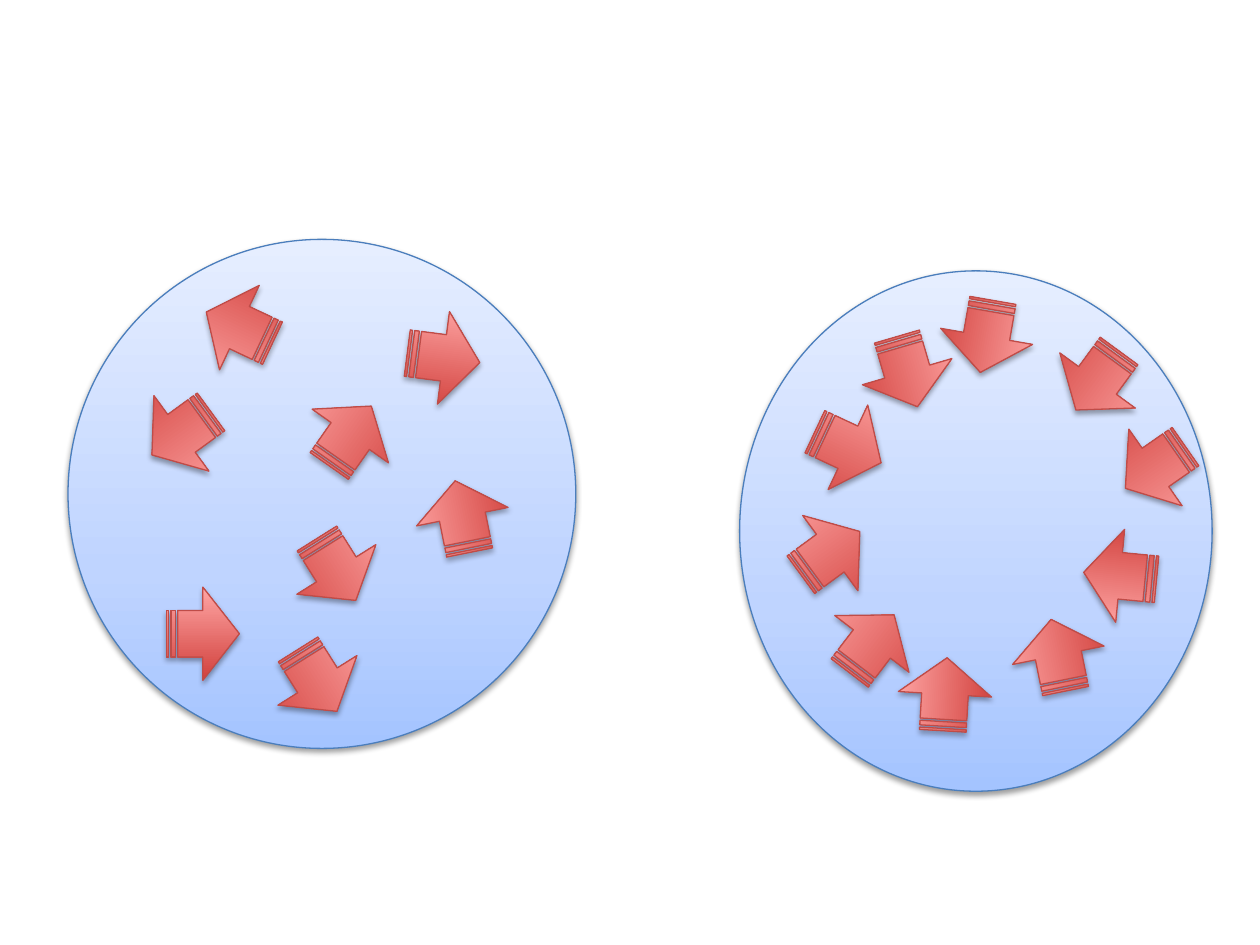
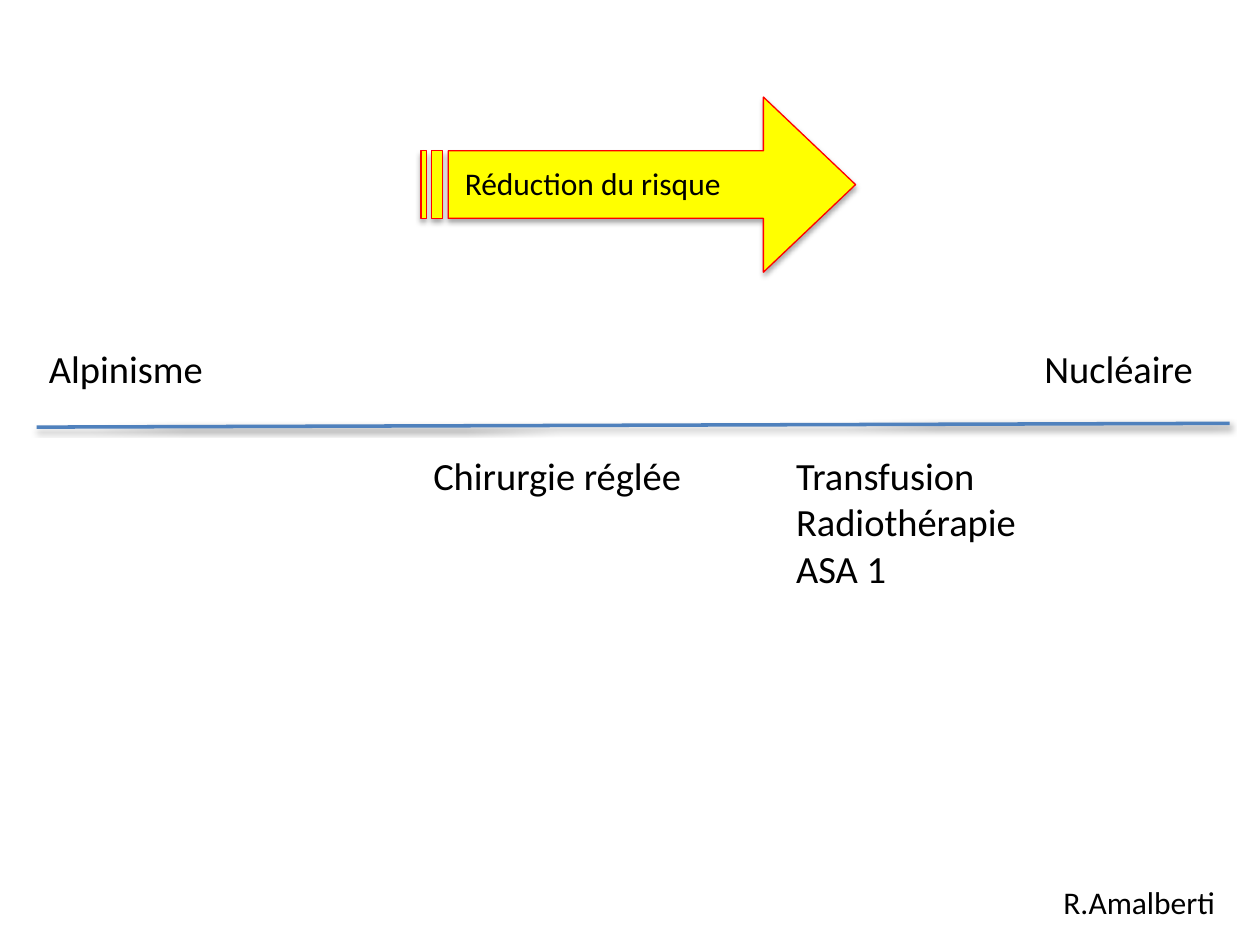
from lxml import etree
from pptx import Presentation
from pptx.dml.color import RGBColor
from pptx.enum.shapes import MSO_CONNECTOR, MSO_SHAPE
from pptx.enum.text import MSO_AUTO_SIZE
from pptx.oxml.ns import qn
from pptx.util import Inches, Pt

OVAL = MSO_SHAPE.OVAL
ARROW = MSO_SHAPE.STRIPED_RIGHT_ARROW
STRAIGHT = MSO_CONNECTOR.STRAIGHT
GROW = MSO_AUTO_SIZE.SHAPE_TO_FIT_TEXT

# Colours and font
BLACK = RGBColor(0x00, 0x00, 0x00)
YELLOW = RGBColor(0xFF, 0xFF, 0x00)
RED = RGBColor(0xFF, 0x00, 0x00)
BLUE = RGBColor(0x4F, 0x81, 0xBD)
RIM = RGBColor(0x4B, 0x7E, 0xBC)
EDGE = RGBColor(0xBF, 0x4C, 0x48)
SKY = [(0, RGBColor(0xA4, 0xC4, 0xFF)), (35, RGBColor(0xBF, 0xD4, 0xFF)),
       (100, RGBColor(0xE6, 0xEE, 0xFF))]
ROSE = [(0, RGBColor(0xD1, 0x40, 0x3C)), (100, RGBColor(0xFF, 0xA6, 0xA5))]
FONT = "Calibri"

# The slide is a grid of 10 columns by 7.5 rows
WIDE, HIGH = Inches(10), Inches(7.5)
COL, ROW = WIDE / 10, HIGH / 7.5
SOFT = (38, 1.6)   # shadow opacity in percent, distance in points
DEEP = (35, 1.8)

# Circles as grid boxes; arrows as column, row and turn inside them
SIZE = (0.58, 0.74)
LOOSE = (0.54, 1.9, 4.03, 4.04)
ASTRAY = [(0.78, 2.76, 0), (2.84, 1.83, 258.6), (0.61, 1.17, 143.9),
          (2.69, 0.57, 7.4), (1.95, 1.19, 305.1), (1.84, 2.25, 57.9),
          (1.07, 0.33, 205.2), (1.69, 3.13, 57.9)]
TIGHT = (5.87, 2.15, 3.75, 4.13)
INWARD = [(0.43, 1.87, 323.7), (3.01, 1.19, 145.2), (2.24, 2.68, 258.6),
          (0.57, 1.03, 25.1), (1.67, 0.15, 99.9), (2.55, 0.5, 126.2),
          (0.76, 2.59, 307.4), (2.73, 2.05, 185.5), (1.04, 0.43, 73.7),
          (1.34, 2.99, 273.4)]


def grid(x, y, w, h):
    return [int(n) for n in (x * COL, y * ROW, w * COL, h * ROW)]


def shade(part, depth):
    """Drop a soft shadow straight down."""
    alpha, dist = depth
    props = part._element.spPr
    effect = etree.SubElement(props, qn("a:effectLst"))
    drop = etree.SubElement(effect, qn("a:outerShdw"), blurRad=str(Pt(3.1)),
                            dist=str(Pt(dist)), dir="5400000", rotWithShape="0")
    tint = etree.SubElement(drop, qn("a:srgbClr"), val=str(BLACK))
    etree.SubElement(tint, qn("a:alpha"), val=str(alpha * 1000))


def blend(part, stops):
    """Fill from bottom to top through the given stops."""
    part.fill.gradient()
    part.fill.gradient_angle = 90
    ramp = part._element.spPr.find(".//" + qn("a:gsLst"))
    for old in list(ramp):
        ramp.remove(old)
    for pos, hue in stops:
        stop = etree.SubElement(ramp, qn("a:gs"), pos=str(pos * 1000))
        etree.SubElement(stop, qn("a:srgbClr"), val=str(hue))


def form(slide, kind, box, fill, line, depth, turn=0):
    part = slide.shapes.add_shape(kind, *grid(*box))
    part.rotation = turn
    if isinstance(fill, RGBColor):
        part.fill.solid()
        part.fill.fore_color.rgb = fill
    else:
        blend(part, fill)
    part.line.color.rgb = line
    part.line.width = Pt(0.75)
    shade(part, depth)
    return part


def write(slide, text, box, size=22, wrap=False):
    frame = slide.shapes.add_textbox(*grid(*box)).text_frame
    frame.word_wrap = wrap
    frame.auto_size = GROW
    frame.text = text
    for para in frame.paragraphs:
        font = para.runs[0].font
        font.name, font.size = FONT, Pt(size)
        font.color.rgb = BLACK


def swarm(slide, box, arrows):
    """A circle with its arrows."""
    form(slide, OVAL, box, SKY, RIM, SOFT)
    for x, y, turn in arrows:
        form(slide, ARROW, (box[0] + x, box[1] + y, *SIZE), ROSE, EDGE, DEEP, turn)


def banner(slide, box):
    """The labelled arrow above the scale."""
    x, y, w, h = box
    part = form(slide, ARROW, box, YELLOW, RED, DEEP)
    part.adjustments[0], part.adjustments[1] = 0.385, 0.526
    write(slide, "Réduction du risque", (x + 0.25, y + 0.48, w - 0.7, 0.4),
          size=18, wrap=True)


def scale(slide, box):
    """A line with its ends named above and examples below."""
    x, y, w, h = box
    left, top, wide, tall = grid(x, y + 0.7, w, 0.03)
    axis = slide.shapes.add_connector(STRAIGHT, left, top, left + wide, top - tall)
    axis.line.color.rgb = BLUE
    axis.line.width = Pt(2)
    shade(axis, SOFT)
    low = y + 0.85
    write(slide, "Nucléaire", (x + 7.9, y, 1.39, 0.47))
    write(slide, "Alpinisme", (x, y, 1.44, 0.47))
    write(slide, "Transfusion\nRadiothérapie\nASA 1",
          (x + 5.93, low, 1.97, h - 0.85))
    write(slide, "Chirurgie réglée", (x + 3.05, low, 2.19, 0.47))


def main():
    deck = Presentation()
    deck.slide_width, deck.slide_height = WIDE, HIGH
    blank = deck.slide_layouts[6]

    # Slide 1: scattered and converging arrows
    first = deck.slides.add_slide(blank)
    swarm(first, LOOSE, ASTRAY)
    swarm(first, TIGHT, INWARD)

    # Slide 2: scale of risk
    second = deck.slides.add_slide(blank)
    scale(second, (0.29, 2.69, 9.47, 2.06))
    banner(second, (3.34, 0.77, 3.45, 1.39))
    write(second, "R.Amalberti", (8.34, 6.96, 1.42, 0.4), size=18)

    deck.save("out.pptx")


if __name__ == "__main__":
    main()
